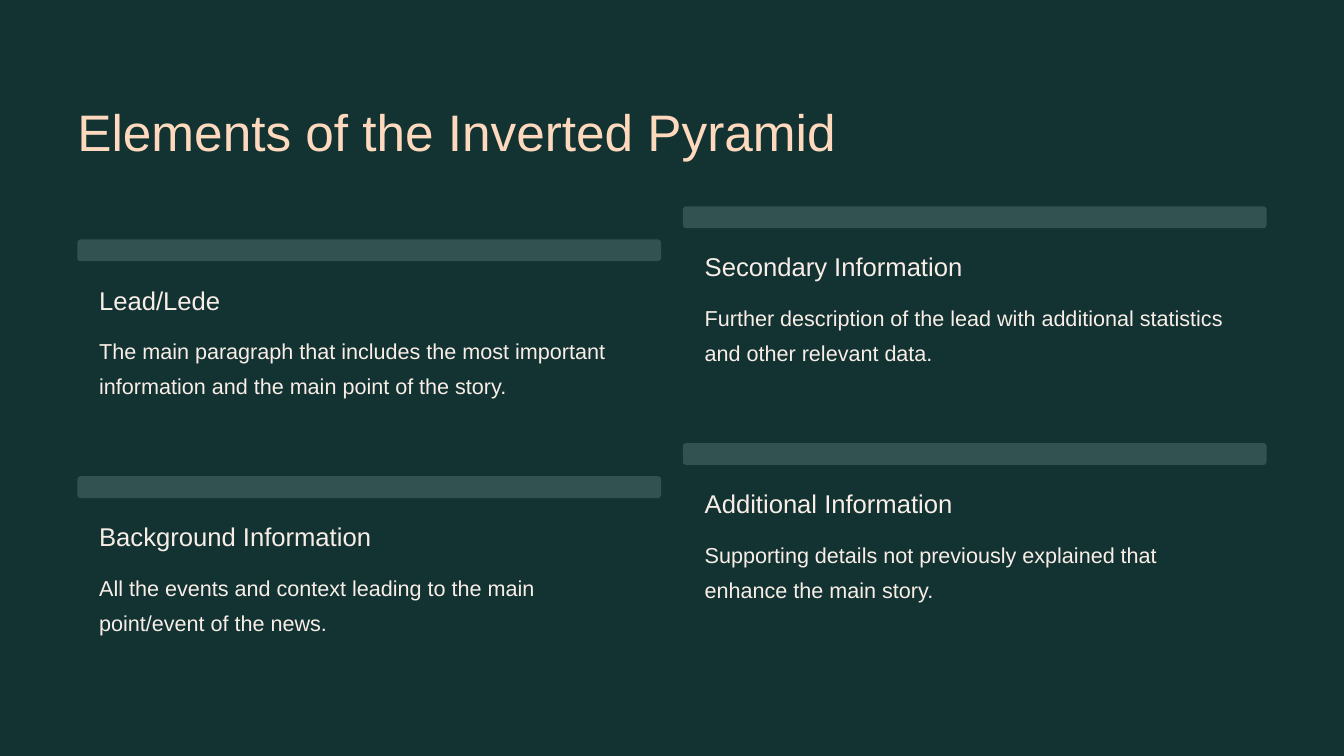
from pptx import Presentation
from pptx.dml.color import RGBColor
from pptx.enum import shapes
from pptx.util import Cm, Pt

# Content: two staggered columns of cards
TITLE = "Elements of the Inverted Pyramid"
COLUMNS = [
    [
        ("Lead/Lede",
         "The main paragraph that includes the most important information "
         "and the main point of the story."),
        ("Background Information",
         "All the events and context leading to the main point/event of the news."),
    ],
    [
        ("Secondary Information",
         "Further description of the lead with additional statistics "
         "and other relevant data."),
        ("Additional Information",
         "Supporting details not previously explained that enhance the main story."),
    ],
]


class Theme:
    font = "Arial"
    background = RGBColor.from_string("123332")
    title = RGBColor.from_string("FFD9BE")
    bar = RGBColor.from_string("315251")
    text = RGBColor.from_string("F9EEE7")
    # Type size and line spacing in points
    title_type = (44, 55)
    heading_type = (22, 27.5)
    body_type = (18.5, 30)


# Layout in centimetres
MARGIN, FIRST_TOP = 2.34, 7.24
COLUMN_STEP, COLUMN_RISE, ROW_STEP = 18.31, 1, 7.16
BAR_W, BAR_H = 17.65, 0.66
INSET, HEADING_DROP, BODY_DROP = 0.66, 1.32, 2.7


def add_text(slide, content, box, type_style, color, wrap=False):
    sp = slide.shapes.add_textbox(*map(Cm, box))
    tf = sp.text_frame
    tf.margin_left = tf.margin_top = tf.margin_right = tf.margin_bottom = 0
    tf.word_wrap = wrap
    tf.text = content
    p = tf.paragraphs[0]
    size, spacing = type_style
    p.line_spacing = Pt(spacing)
    font = p.runs[0].font
    font.name, font.size, font.color.rgb = Theme.font, Pt(size), color


def add_card(slide, left, top, heading, body):
    bar = slide.shapes.add_shape(shapes.MSO_SHAPE.ROUNDED_RECTANGLE,
                                 Cm(left), Cm(top), Cm(BAR_W), Cm(BAR_H))
    bar.adjustments[0] = 0.15
    bar.shadow.inherit = False
    bar.fill.solid()
    bar.fill.fore_color.rgb = Theme.bar
    bar.line.fill.background()

    x, width = left + INSET, BAR_W - 2 * INSET
    add_text(slide, heading, (x, top + HEADING_DROP, 8.4, 0.97),
             Theme.heading_type, Theme.text)
    add_text(slide, body, (x, top + BODY_DROP, width, 2.13),
             Theme.body_type, Theme.text, wrap=True)


def main():
    prs = Presentation()
    prs.slide_width, prs.slide_height = Cm(40.64), Cm(22.86)
    slide = prs.slides.add_slide(prs.slide_layouts[6])
    slide.background.fill.solid()
    slide.background.fill.fore_color.rgb = Theme.background

    # Title
    add_text(slide, TITLE, (MARGIN, 2.95, 23.62, 1.96),
             Theme.title_type, Theme.title)

    # Cards
    for col, cards in enumerate(COLUMNS):
        for row, (heading, body) in enumerate(cards):
            add_card(slide, MARGIN + col * COLUMN_STEP,
                     FIRST_TOP - col * COLUMN_RISE + row * ROW_STEP,
                     heading, body)

    prs.save("out.pptx")


if __name__ == "__main__":
    main()
